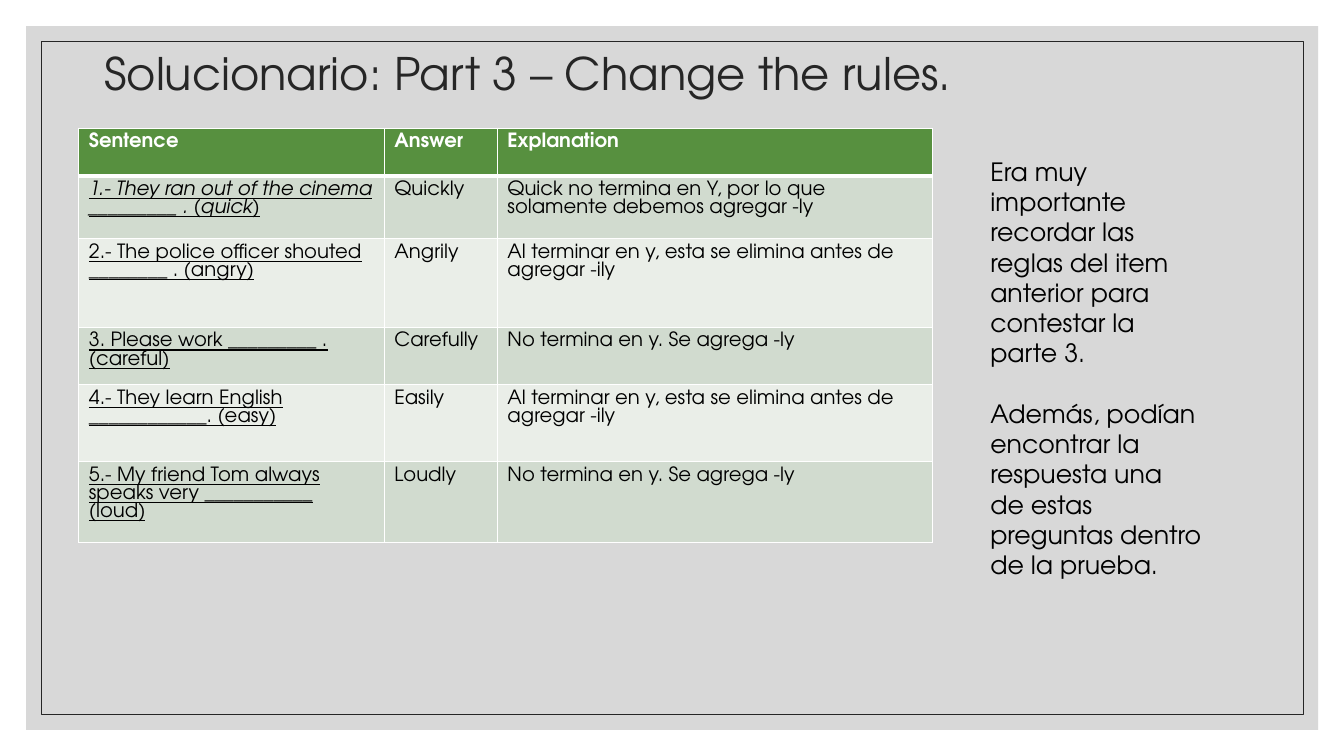
from lxml import etree
from pptx import Presentation
from pptx.dml.color import RGBColor
from pptx.enum import shapes, text
from pptx.oxml import ns
from pptx.util import Pt

HEADINGS = ("Sentence", "Answer", "Explanation")
ENDS_IN_Y = "Al terminar en y, esta se elimina antes de agregar -ily"
NO_Y = "No termina en y. Se agrega -ly"
ANSWERS = (
    ("1.- They ran out of the cinema _________ . (quick)", "Quickly",
     "Quick no termina en Y, por lo que solamente debemos agregar -ly"),
    ("2.- The police officer shouted ________ . (angry)", "Angrily", ENDS_IN_Y),
    ("3. Please work _________ . (careful)", "Carefully", NO_Y),
    ("4.- They learn English ____________. (easy)", "Easily", ENDS_IN_Y),
    ("5.- My friend Tom always speaks very ___________ (loud)", "Loudly", NO_Y),
)
ADVICE = (
    "Era muy importante recordar las reglas del item anterior para contestar la parte 3.",
    "Además, podían encontrar la respuesta una de estas preguntas dentro de la prueba.",
)


def color(value):
    return RGBColor.from_string(value)


def write(paragraph, words, size=14, ink="000000", font="TeX Gyre Adventor",
          bold=False, italic=False, underline=False, spacing=1.0, before=0):
    paragraph.line_spacing = spacing
    paragraph.space_before = Pt(before)
    run = paragraph.add_run()
    run.text = words
    run.font.name = font
    run.font.size = Pt(size)
    run.font.color.rgb = color(ink)
    run.font.bold = bold
    run.font.italic = italic
    run.font.underline = underline


class AnswerSlide:
    """Holds the colours and the current slide, and draws each kind of element."""

    header = "57903F"
    bands = ("D1DBCF", "EAEEE8")
    dark = "262626"
    white = "FFFFFF"

    def __init__(self, presentation):
        self.slide = presentation.slides.add_slide(presentation.slide_layouts[6])

    def panel(self, box, fill=None, opacity=100, line=None):
        shape = self.slide.shapes.add_shape(shapes.MSO_SHAPE.RECTANGLE, *map(Pt, box))
        shape.shadow.inherit = False
        if fill:
            shape.fill.solid()
            shape.fill.fore_color.rgb = color(fill)
            tint = shape.fill._xPr.find(".//" + ns.qn("a:srgbClr"))
            etree.SubElement(tint, ns.qn("a:alpha"), val=str(opacity * 1000))
        else:
            shape.fill.background()
        if line:
            shape.line.color.rgb = color(line)
            shape.line.width = Pt(0.5)
        else:
            shape.line.fill.background()

    def text_box(self, box, paragraphs, anchor=text.MSO_ANCHOR.TOP, gap=0, **style):
        frame = self.slide.shapes.add_textbox(*map(Pt, box)).text_frame
        frame.word_wrap = True
        frame.vertical_anchor = anchor
        for index, words in enumerate(paragraphs):
            paragraph = frame.add_paragraph() if index else frame.paragraphs[0]
            write(paragraph, words, before=gap if index else 0, **style)

    def borders(self, cell, top, bottom):
        properties = cell._tc.get_or_add_tcPr()
        sides = (("L", 1), ("R", 1), ("T", top), ("B", bottom))
        for index, (side, width) in enumerate(sides):
            line = etree.Element(ns.qn("a:ln" + side), w=str(Pt(width)))
            fill = etree.SubElement(line, ns.qn("a:solidFill"))
            etree.SubElement(fill, ns.qn("a:srgbClr"), val=self.white)
            properties.insert(index, line)

    def table(self, left, top, widths, heights, rows):
        table = self.slide.shapes.add_table(
            len(rows), len(widths), Pt(left), Pt(top),
            Pt(sum(widths)), Pt(sum(heights))).table
        for column, width in zip(table.columns, widths):
            column.width = Pt(width)
        for r, (height, row) in enumerate(zip(heights, rows)):
            table.rows[r].height = Pt(height)
            for c, words in enumerate(row):
                cell = table.cell(r, c)
                cell.fill.solid()
                cell.fill.fore_color.rgb = color(
                    self.bands[(r - 1) % 2] if r else self.header)
                self.borders(cell, top=3 if r == 1 else 1, bottom=1 if r else 3)
                write(cell.text_frame.paragraphs[0], words,
                      ink="000000" if r else self.white, bold=r == 0,
                      italic=r == 1 and c == 0, underline=r > 0 and c == 0)


def main():
    presentation = Presentation()
    presentation.slide_width = Pt(960)
    presentation.slide_height = Pt(540)
    page = AnswerSlide(presentation)
    page.panel((18.7, 18.7, 922.8, 502.6), fill="BFBFBF", opacity=60)
    page.panel((29.5, 29.5, 901.4, 481), line=page.dark)
    page.text_box((67.5, 0, 823, 108), ["Solucionario: Part 3 – Change the rules."],
                  anchor=text.MSO_ANCHOR.MIDDLE, size=32, ink=page.dark, spacing=0.9)
    page.table(56.3, 91.5, (218.2, 80.8, 310.8), (34.2, 44.8, 63.4, 37.2, 55, 54.8),
               (HEADINGS,) + ANSWERS)
    page.text_box((700.3, 108, 165.6, 334), ADVICE, size=18, gap=21.6)
    presentation.save("out.pptx")


if __name__ == "__main__":
    main()
